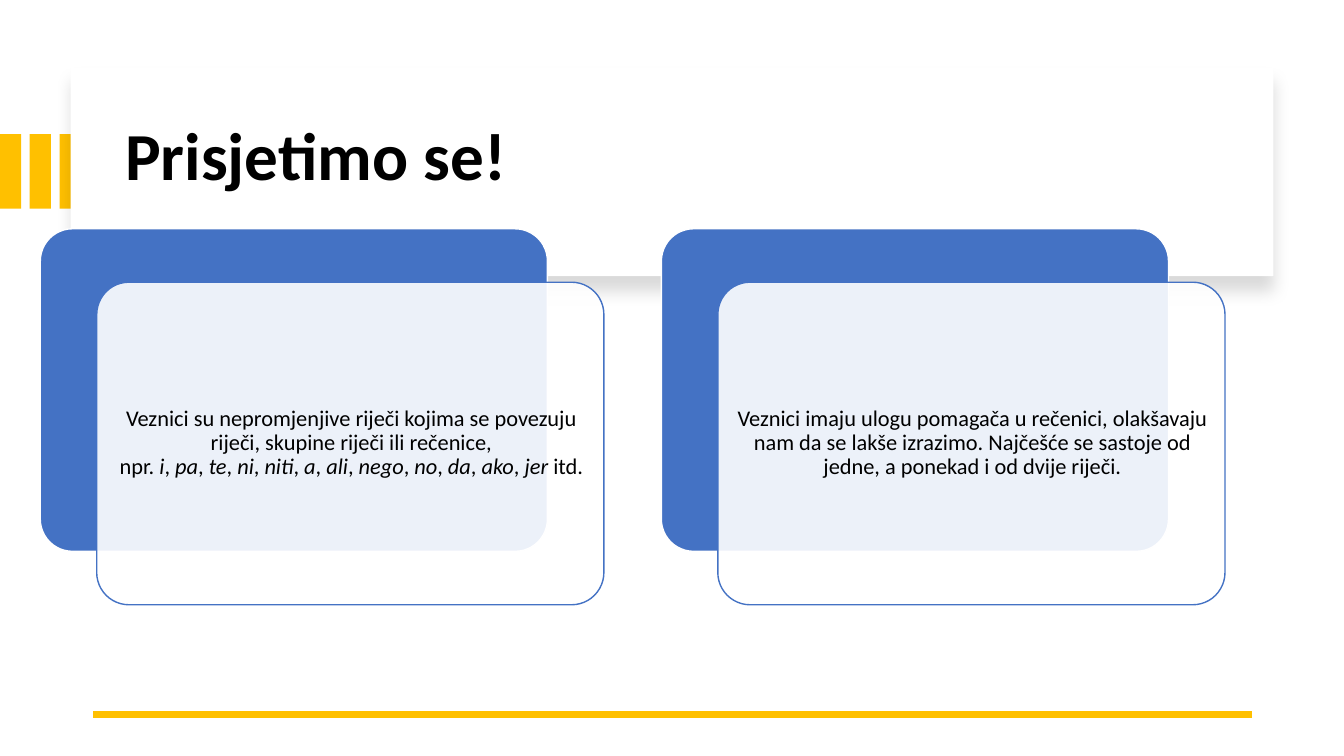
import pptx
import pptx.util
import pptx.dml.color
import pptx.enum.shapes
import pptx.enum.text
import pptx.oxml
import pptx.oxml.ns
from lxml import etree

Inches = pptx.util.Inches
Pt = pptx.util.Pt
SHAPES = pptx.enum.shapes.MSO_SHAPE
ALIGN = pptx.enum.text.PP_ALIGN

GOLD, BLUE, WHITE, BLACK = "FFC000", "4472C4", "FFFFFF", "000000"
FONT = "Calibri"

INTRO = ("Veznici su nepromjenjive riječi kojima se povezuju "
         "riječi, skupine riječi ili rečenice, npr.")
CONJUNCTIONS = ["i", "pa", "te", "ni", "niti", "a", "ali", "nego",
                "no", "da", "ako", "jer"]
ROLE = ("Veznici imaju ulogu pomagača u rečenici, olakšavaju nam da se lakše "
        "izrazimo. Najčešće se sastoje od jedne, a ponekad i od dvije riječi.")


def color(hex_value):
    return pptx.dml.color.RGBColor.from_string(hex_value)


def add_box(slide, kind, at, fill, line=None, opacity=None):
    box = slide.shapes.add_shape(kind, *map(Inches, at))
    box.shadow.inherit = False
    box.fill.solid()
    box.fill.fore_color.rgb = color(fill)
    if line:
        box.line.color.rgb = color(line)
        box.line.width = Pt(1)
    else:
        box.line.fill.background()
    if opacity is not None:
        srgb = box.element.spPr.find(".//" + pptx.oxml.ns.qn("a:srgbClr"))
        etree.SubElement(srgb, pptx.oxml.ns.qn("a:alpha"), val=str(opacity * 1000))
    return box


def add_soft_shadow(box, opacity, blur, distance):
    effects = box.element.spPr.find(pptx.oxml.ns.qn("a:effectLst"))
    effects.append(pptx.oxml.parse_xml(
        f'<a:outerShdw {pptx.oxml.ns.nsdecls("a")} blurRad="{Pt(blur)}" '
        f'dist="{Pt(distance)}" dir="5400000" algn="t" rotWithShape="0">'
        f'<a:srgbClr val="{BLACK}"><a:alpha val="{opacity * 1000}"/></a:srgbClr>'
        '</a:outerShdw>'))


def add_rule(slide, start, end, hex_value, width):
    rule = slide.shapes.add_connector(
        pptx.enum.shapes.MSO_CONNECTOR.STRAIGHT, *map(Inches, start + end))
    rule.line.color.rgb = color(hex_value)
    rule.line.width = Pt(width)
    etree.SubElement(rule.element.spPr, pptx.oxml.ns.qn("a:effectLst"))


def format_run(run, size, bold=False, italic=False):
    run.font.name = FONT
    run.font.size = Pt(size)
    run.font.bold = bold
    run.font.italic = italic
    run.font.color.rgb = color(BLACK)


def format_paragraph(frame, alignment):
    frame.word_wrap = True
    frame.auto_size = pptx.enum.text.MSO_AUTO_SIZE.NONE
    frame.vertical_anchor = pptx.enum.text.MSO_ANCHOR.MIDDLE
    paragraph = frame.paragraphs[0]
    paragraph.alignment = alignment
    paragraph.line_spacing = 0.9
    return paragraph


def place_title(slide, text, at):
    title = slide.shapes.title
    title.left, title.top, title.width, title.height = map(Inches, at)
    title.text_frame.text = text
    paragraph = format_paragraph(title.text_frame, ALIGN.LEFT)
    format_run(paragraph.runs[0], 48, bold=True)
    # Bring the title in front of the banner
    title.element.getparent().append(title.element)


def add_card(slide, left, pieces):
    """Blue backing, translucent panel and text given as (text, italic) pieces."""
    backing = add_box(slide, SHAPES.ROUNDED_RECTANGLE,
                      (left, 2.27, 5.03, 3.2), BLUE, WHITE)
    panel = add_box(slide, SHAPES.ROUNDED_RECTANGLE,
                    (left + 0.56, 2.8, 5.03, 3.2), WHITE, BLUE, opacity=90)
    for layer in (backing, panel):
        layer.adjustments[0] = 0.1

    caption = slide.shapes.add_textbox(
        *map(Inches, (left + 0.66, 2.89, 4.85, 3.01))).text_frame
    caption.margin_left = caption.margin_right = Inches(0.07)
    caption.margin_top = caption.margin_bottom = Inches(0.07)
    paragraph = format_paragraph(caption, ALIGN.CENTER)
    for text, italic in pieces:
        run = paragraph.add_run()
        run.text = text
        format_run(run, 16, italic=italic)


def definition_pieces():
    """Non-breaking spaces keep the list of examples on one line."""
    nbsp = chr(160)
    pieces = [(INTRO + nbsp, False)]
    for index, word in enumerate(CONJUNCTIONS):
        if index:
            pieces += [(",", False), (nbsp + word, True)]
        else:
            pieces.append((word, True))
    return pieces + [(nbsp + "itd.", False)]


def main():
    presentation = pptx.Presentation()
    presentation.slide_width = Inches(13.33)
    presentation.slide_height = Inches(7.5)
    slide = presentation.slides.add_slide(presentation.slide_layouts[5])

    # Gold bars at the left edge
    for index in range(3):
        add_box(slide, SHAPES.RECTANGLE, (index * 0.295, 1.33, 0.21, 0.74), GOLD)

    # Title banner
    banner = add_box(slide, SHAPES.RECTANGLE, (0.7, 0.67, 11.93, 2.07), WHITE)
    add_soft_shadow(banner, opacity=15, blur=11, distance=10)
    place_title(slide, "Prisjetimo se!", (1.14, 0.89, 11.1, 1.36))

    # Bottom rule
    add_rule(slide, (12.42, 7.09), (0.92, 7.09), GOLD, 4.5)

    # Cards
    for index, pieces in enumerate([definition_pieces(), [(ROLE, False)]]):
        add_card(slide, 0.4 + index * 6.16, pieces)

    presentation.save("out.pptx")


if __name__ == "__main__":
    main()
